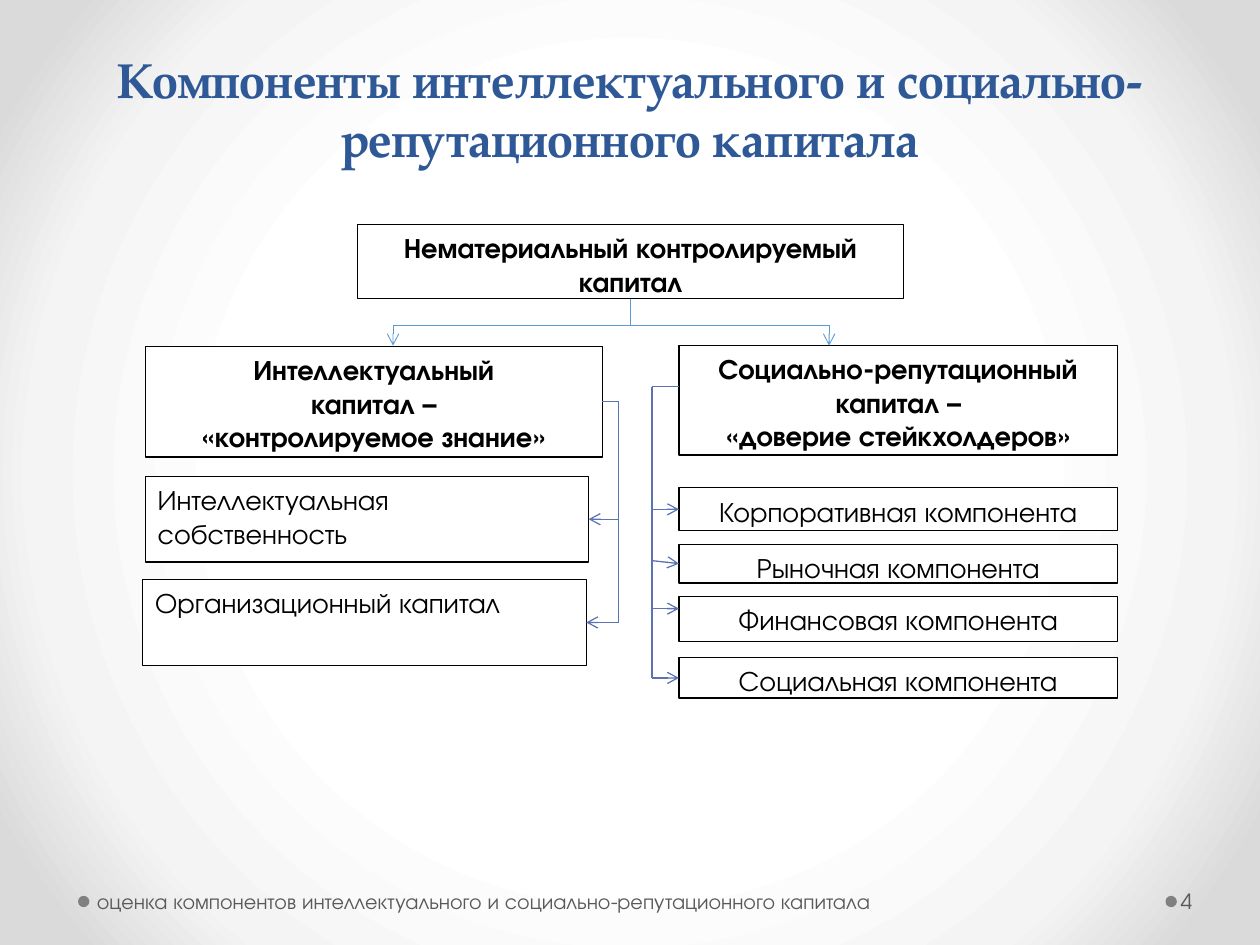
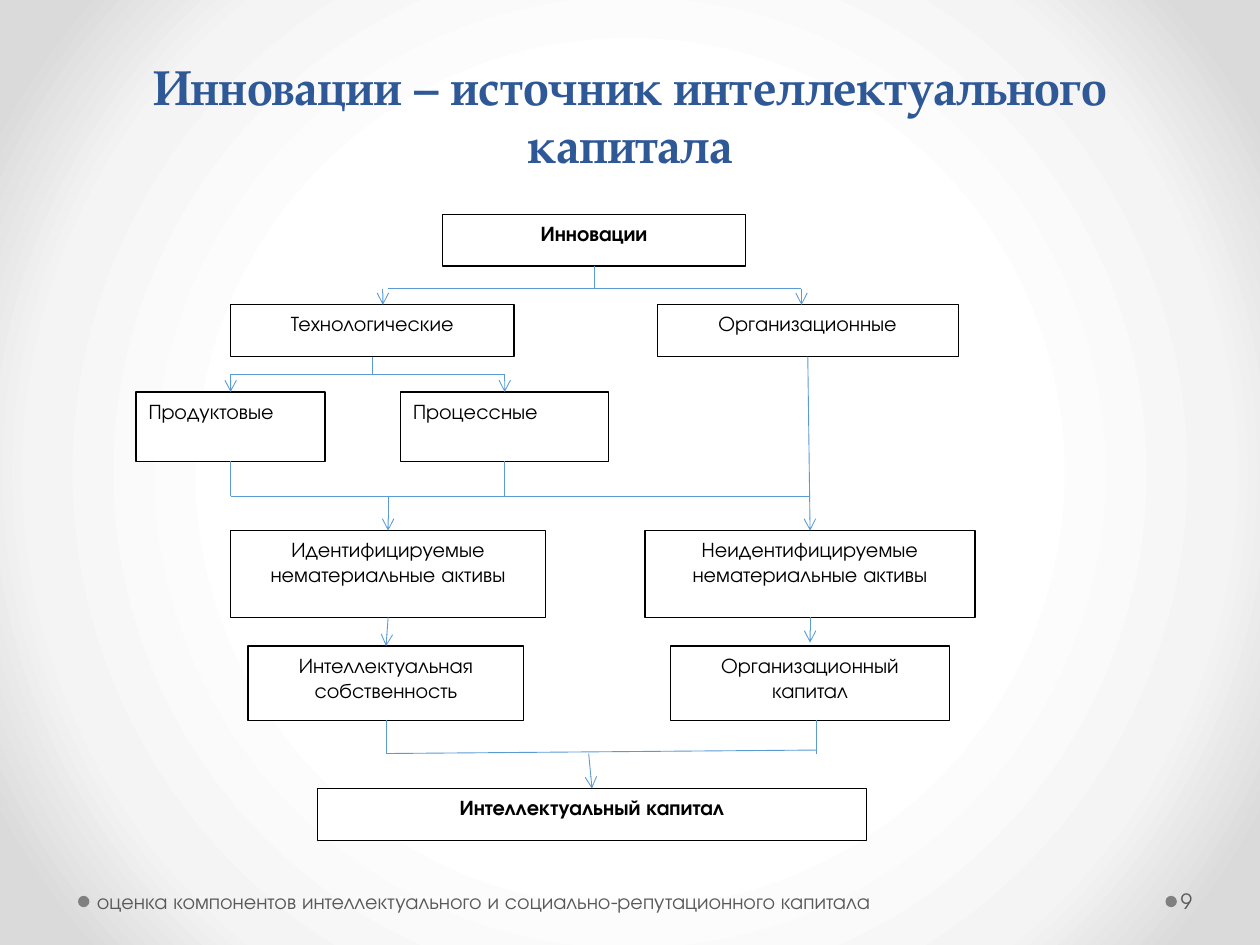
"""Build two slides of block diagrams on intellectual and reputational capital."""
from dataclasses import dataclass

from lxml.etree import SubElement
from pptx import Presentation
from pptx.dml.color import RGBColor
from pptx.enum.shapes import MSO_CONNECTOR, MSO_SHAPE
from pptx.enum.text import MSO_ANCHOR, MSO_AUTO_SIZE, PP_ALIGN
from pptx.oxml import parse_xml
from pptx.oxml.ns import nsdecls, qn
from pptx.util import Pt

TOP, LEFT, BOTTOM, RIGHT = range(4)


@dataclass(frozen=True)
class Theme:
    title_font: str = "TeX Gyre Pagella"
    body_font: str = "TeX Gyre Adventor"
    title_size: float = 28
    large_size: float = 16
    small_size: float = 12
    title_color: str = "2F5897"
    text_color: str = "000000"
    footer_color: str = "595959"
    dot_color: str = "808080"
    box_color: str = "FFFFFF"
    tree_color: str = "5B9BD5"
    branch_color: str = "5C72B2"
    tree_weight: float = 0.5
    branch_weight: float = 0.75
    outline_weight: float = 0.75
    backdrop: tuple = ((50, "FFFFFF"), (76, "F4F4F4"), (92, "DADADA"))
    footer: str = "оценка компонентов интеллектуального и социально-репутационного капитала"


def color(value):
    return RGBColor.from_string(value)


def write_text(frame, text, *, font, size, fill, bold=False, align=PP_ALIGN.LEFT,
               anchor=MSO_ANCHOR.TOP, insets=(7.2, 3.6, 7.2, 3.6)):
    frame.word_wrap = True
    frame.auto_size = MSO_AUTO_SIZE.NONE
    frame.vertical_anchor = anchor
    (frame.margin_left, frame.margin_top,
     frame.margin_right, frame.margin_bottom) = map(Pt, insets)
    for index, line in enumerate(text.split("\n")):
        para = frame.add_paragraph() if index else frame.paragraphs[0]
        para.alignment = align
        span = para.add_run()
        span.text = line
        span.font.name = font
        span.font.size = Pt(size)
        span.font.bold = bold
        span.font.color.rgb = color(fill)


def site_point(box, side):
    middle_x, middle_y = box.left + box.width // 2, box.top + box.height // 2
    return {TOP: (middle_x, box.top), LEFT: (box.left, middle_y),
            BOTTOM: (middle_x, box.top + box.height),
            RIGHT: (box.left + box.width, middle_y)}[side]


def middle(box):
    return (box.left + box.width / 2) / Pt(1), (box.top + box.height / 2) / Pt(1)


class Painter:
    def __init__(self, deck, theme):
        self.deck, self.theme, self.page = deck, theme, None
        self.paint_backdrop()

    def paint_backdrop(self):
        master = self.deck.slide_master
        master.background.fill.solid()
        holder = master.element.find(".//" + qn("p:bgPr"))
        stops = "".join(f'<a:gs pos="{place * 1000}"><a:srgbClr val="{value}"/></a:gs>'
                        for place, value in self.theme.backdrop)
        holder.replace(holder[0], parse_xml(
            f'<a:gradFill {nsdecls("a")} rotWithShape="1"><a:gsLst>{stops}</a:gsLst>'
            '<a:path path="circle"><a:fillToRect l="50000" t="50000" r="50000" b="50000"/>'
            '</a:path></a:gradFill>'))

    def start_page(self, title, number, top, height):
        theme = self.theme
        self.page = self.deck.slides.add_slide(self.deck.slide_layouts[5])
        for left in (666, 44.6):
            self.dot(left, 511.9)
        heading = self.page.shapes.title
        heading.left, heading.top, heading.width, heading.height = map(
            Pt, (36, top, 648, height))
        write_text(heading.text_frame, title, font=theme.title_font, size=theme.title_size,
                   fill=theme.title_color, bold=True, align=PP_ALIGN.CENTER,
                   anchor=MSO_ANCHOR.BOTTOM)
        self.footer_text(theme.footer, 51.8, 590, (3.6, 3.6, 7.2, 3.6))
        self.footer_text(str(number), 672.5, 44, (2.2, 3.6, 3.6, 3.6))

    def dot(self, left, top):
        dot = self.page.shapes.add_shape(MSO_SHAPE.OVAL, Pt(left), Pt(top), Pt(6.5), Pt(6.5))
        dot.shadow.inherit = False
        dot.fill.solid()
        dot.fill.fore_color.rgb = color(self.theme.dot_color)
        dot.line.fill.background()

    def footer_text(self, text, left, width, insets):
        box = self.page.shapes.add_textbox(Pt(left), Pt(500.4), Pt(width), Pt(28.8))
        write_text(box.text_frame, text, font=self.theme.body_font, size=self.theme.small_size,
                   fill=self.theme.footer_color, anchor=MSO_ANCHOR.MIDDLE, insets=insets)

    def box(self, text, left, top, width, height, *, size, bold=False, align=PP_ALIGN.CENTER):
        theme = self.theme
        box = self.page.shapes.add_shape(
            MSO_SHAPE.RECTANGLE, *map(Pt, (left, top, width, height)))
        box.shadow.inherit = False
        box.fill.solid()
        box.fill.fore_color.rgb = color(theme.box_color)
        box.line.color.rgb = color(theme.text_color)
        box.line.width = Pt(theme.outline_weight)
        write_text(box.text_frame, text, font=theme.body_font, size=size,
                   fill=theme.text_color, bold=bold, align=align)
        return box

    def link(self, start, end, *, arrow=False, branch=False):
        """Draw a line between two ends, each an (x, y) point or a (box, side) pair."""
        theme = self.theme
        joined = [hasattr(stop[0], "text_frame") for stop in (start, end)]
        points = [site_point(*stop) if join else tuple(map(Pt, stop))
                  for stop, join in zip((start, end), joined)]
        line = self.page.shapes.add_connector(MSO_CONNECTOR.STRAIGHT, *points[0], *points[1])
        if joined[0]:
            line.begin_connect(*start)
        if joined[1]:
            line.end_connect(*end)
        line.line.color.rgb = color(theme.branch_color if branch else theme.tree_color)
        line.line.width = Pt(theme.branch_weight if branch else theme.tree_weight)
        if arrow:
            SubElement(line.line._get_or_add_ln(), qn("a:tailEnd"), type="arrow")
        SubElement(line._element.spPr, qn("a:effectLst"))


def draw_capital_components(painter):
    size = painter.theme.large_size
    painter.start_page("Компоненты интеллектуального и социально-репутационного капитала",
                       4, 25.9, 73.4)
    root = painter.box("Нематериальный контролируемый капитал",
                       204.5, 128.2, 311.8, 42.5, size=size, bold=True)
    painter.box("Социально-репутационный\nкапитал –\n«доверие стейкхолдеров»",
                388, 197.5, 250.6, 62.6, size=size, bold=True)
    knowledge = painter.box("Интеллектуальный\nкапитал –\n«контролируемое знание»",
                            83, 198, 261.2, 63.2, size=size, bold=True)
    assets = [painter.box(text, left, top, 253.4, 49, size=size, align=PP_ALIGN.LEFT)
              for text, left, top in (("Интеллектуальная собственность", 83, 272.2),
                                      ("Организационный капитал", 81.6, 331.2))]
    corporate, market, financial, social = [
        painter.box(f"{name} компонента", 388, top, 250.6, height, size=size)
        for name, top, height in (("Корпоративная", 278.8, 24.5), ("Рыночная", 311, 22.2),
                                  ("Финансовая", 340.8, 25.8), ("Социальная", 375.8, 23.2))]

    bar = 185.8
    painter.link((224.6, bar), (473.8, bar))
    painter.link((root, BOTTOM), (middle(root)[0], bar))
    for x in (224.6, 473.8):
        painter.link((x, bar), (x, 197.5), arrow=True)

    spine, start = 353.5, middle(knowledge)[1]
    painter.link((knowledge, RIGHT), (spine, start), branch=True)
    painter.link((spine, start), (spine, middle(assets[-1])[1]), branch=True)
    for asset in assets:
        painter.link((spine, middle(asset)[1]), (asset, RIGHT), arrow=True, branch=True)

    spine, start = 372.6, 221
    painter.link((388, start), (spine, start), branch=True)
    painter.link((spine, start), (spine, middle(social)[1]), branch=True)
    for y, end in ((middle(corporate)[1], (corporate, LEFT)), (320.4, (market, LEFT)),
                   (347.8, (388, 347.8)), (middle(social)[1], (social, LEFT))):
        painter.link((spine, y), end, arrow=True, branch=True)


def draw_innovation_sources(painter):
    size = painter.theme.small_size
    painter.start_page("Инновации – источник интеллектуального капитала", 9, 40.3, 62.6)
    innovation = painter.box("Инновации", 252.8, 122.4, 173.4, 29.6, size=size, bold=True)
    organizational = painter.box("Организационные", 375.6, 174.2, 172, 29.6, size=size)
    technological = painter.box("Технологические", 131.8, 174.2, 162, 29.6, size=size)
    identified = painter.box("Идентифицируемые нематериальные активы",
                             131.8, 303.2, 180, 49.6, size=size)
    unidentified = painter.box("Неидентифицируемые нематериальные активы",
                               368.6, 303.2, 188.6, 49.6, size=size)
    painter.box("Организационный\nкапитал", 383, 369.2, 159.8, 42.4, size=size)
    product, process = [
        painter.box(text, left, 224, width, 39.6, size=size, align=PP_ALIGN.LEFT)
        for text, left, width in (("Продуктовые", 77.8, 108), ("Процессные", 229, 118.8))]
    capital = painter.box("Интеллектуальный капитал", 181.4, 450.6, 313.8, 29.6,
                          size=size, bold=True)
    ownership = painter.box("Интеллектуальная собственность",
                            141.8, 369.2, 157.6, 42.4, size=size)

    kinds_bar, types_bar, assets_bar, capital_bar = 165, 214, 283.6, 430.6
    painter.link((innovation, BOTTOM), (middle(innovation)[0], kinds_bar))
    painter.link((221.8, kinds_bar), (458, kinds_bar))
    for x in (218.8, 458):
        painter.link((x, kinds_bar), (x, 174.2), arrow=True)

    painter.link((technological, BOTTOM), (middle(technological)[0], types_bar))
    painter.link((middle(product)[0], types_bar), (middle(process)[0], types_bar))
    for kind in (product, process):
        x = middle(kind)[0]
        painter.link((x, types_bar), (kind, TOP), arrow=True)
        painter.link((kind, BOTTOM), (x, assets_bar))

    painter.link((middle(product)[0], assets_bar), (middle(unidentified)[0], assets_bar))
    painter.link((middle(identified)[0], assets_bar), (identified, TOP), arrow=True)
    painter.link((organizational, BOTTOM), (unidentified, TOP), arrow=True)
    painter.link((identified, BOTTOM), (ownership, TOP), arrow=True)
    painter.link((unidentified, BOTTOM), (middle(unidentified)[0], 367.2), arrow=True)

    painter.link((ownership, BOTTOM), (middle(ownership)[0], capital_bar))
    painter.link((466.6, 411.6), (466.6, capital_bar))
    painter.link((middle(ownership)[0], capital_bar), (466.6, 428.6))
    painter.link((336.4, capital_bar), (capital, TOP), arrow=True)


def main():
    deck = Presentation()
    deck.slide_width, deck.slide_height = Pt(720), Pt(540)
    painter = Painter(deck, Theme())
    draw_capital_components(painter)
    draw_innovation_sources(painter)
    deck.save("out.pptx")


if __name__ == "__main__":
    main()
